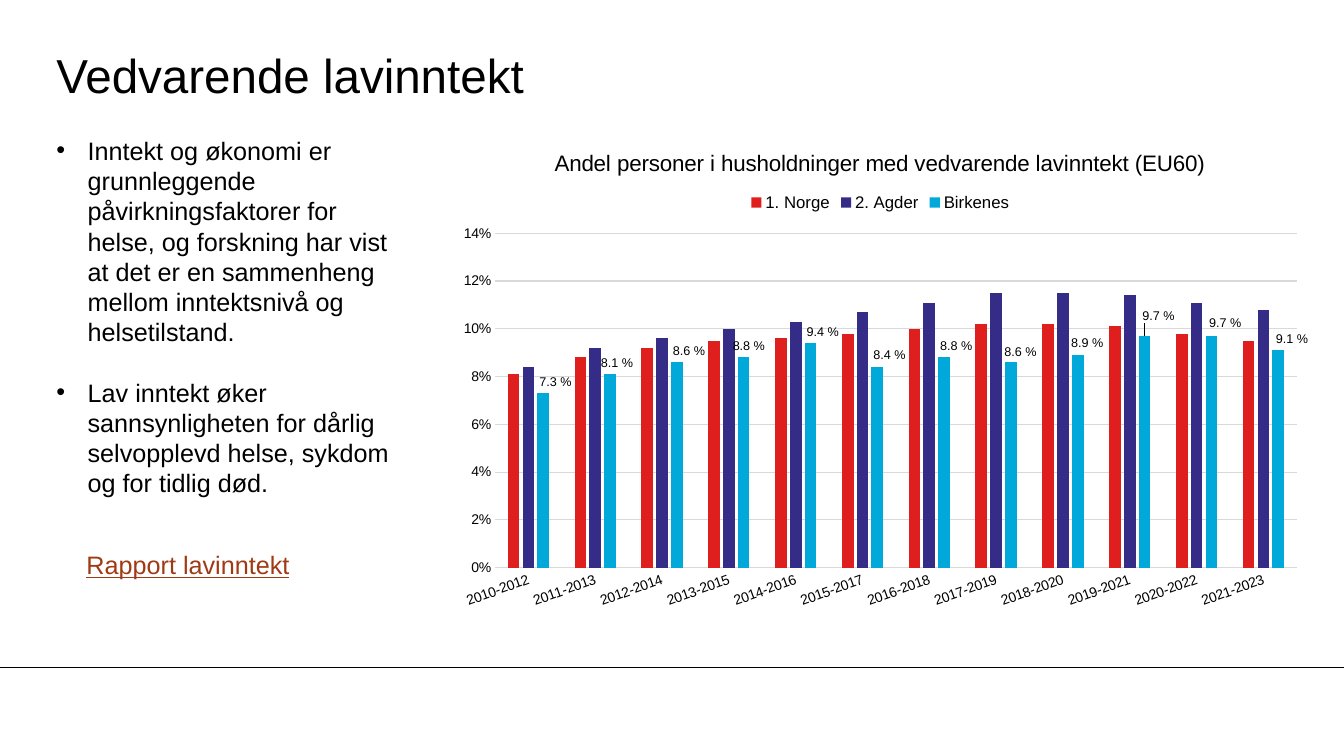
from lxml import etree
from pptx import Presentation
from pptx.chart.data import CategoryChartData
from pptx.dml.color import RGBColor
from pptx.enum.chart import (XL_CHART_TYPE as ChartType, XL_LABEL_POSITION as LabelPosition,
                             XL_LEGEND_POSITION as LegendPosition, XL_TICK_MARK as TickMark)
from pptx.enum.shapes import MSO_CONNECTOR as Connector
from pptx.enum.text import MSO_ANCHOR as Anchor
from pptx.oxml.ns import qn
from pptx.util import Cm, Pt

FONT = "Arial"
BLACK, GREY, LINK = "000000", "D9D9D9", "9F3A14"
REASONS = [
    "Inntekt og økonomi er grunnleggende påvirkningsfaktorer for helse, og forskning "
    "har vist at det er en sammenheng mellom inntektsnivå og helsetilstand.",
    "Lav inntekt øker sannsynligheten for dårlig selvopplevd helse, sykdom og for tidlig død.",
]
CHART_TITLE = "Andel personer i husholdninger med vedvarende lavinntekt (EU60)"
PERIODS = [f"{year}-{year + 2}" for year in range(2010, 2022)]
SERIES = [
    ("1. Norge", "DF1F1D", [8.1, 8.8, 9.2, 9.5, 9.6, 9.8, 10, 10.2, 10.2, 10.1, 9.8, 9.5]),
    ("2. Agder", "342C86", [8.4, 9.2, 9.6, 10, 10.3, 10.7, 11.1, 11.5, 11.5, 11.4, 11.1, 10.8]),
    ("Birkenes", "00A9DA", [7.3, 8.1, 8.6, 8.8, 9.4, 8.4, 8.8, 8.6, 8.9, 9.7, 9.7, 9.1]),
]
LABEL_SHIFT = (0.014, 0)
SPECIAL_SHIFTS = {
    "2011-2013": (0.008, 0), "2013-2015": (0.006, 0), "2017-2019": (0.011, 0.002),
    "2018-2020": (0.011, 0), "2019-2021": (0.016, -0.017), "2020-2022": (0.016, -0.002),
    "2021-2023": (0.016, 0),
}


def color(hex_string):
    return RGBColor.from_string(hex_string)


def set_font(font, size, hex_string=BLACK):
    font.name, font.size, font.bold = FONT, Pt(size), False
    font.color.rgb = color(hex_string)


def set_line(line, hex_string):
    line.color.rgb = color(hex_string)
    line.width = Pt(0.75)


def add_text(slide, box, texts, size, hex_string=BLACK):
    """Add a wrapping text box with one paragraph per text and return its frame."""
    frame = slide.shapes.add_textbox(*map(Cm, box)).text_frame
    frame.word_wrap = True
    frame.text = "\n".join(texts)
    for paragraph in frame.paragraphs:
        set_font(paragraph.font, size, hex_string)
    return frame


def add_title(slide, box):
    frame = add_text(slide, box, ["Vedvarende lavinntekt"], 34)
    frame.vertical_anchor = Anchor.MIDDLE
    frame.margin_left = frame.margin_right = frame.margin_top = frame.margin_bottom = 0


def add_reasons(slide, box):
    frame = add_text(slide, box, REASONS, 18)
    for index, paragraph in enumerate(frame.paragraphs):
        properties = paragraph._p.get_or_add_pPr()
        properties.set("marL", str(Cm(0.79)))
        properties.set("indent", str(Cm(-0.79)))
        properties.insert(0, etree.Element(qn("a:buFont"), typeface=FONT))
        properties.insert(1, etree.Element(qn("a:buChar"), char="•"))
        if index:
            paragraph.space_before = Pt(21.5)


def add_report_link(slide, box):
    frame = add_text(slide, box, ["Rapport lavinntekt"], 18, LINK)
    frame.paragraphs[0].font.underline = True


def set_layout(parent, index, **values):
    """Give a chart element a manual layout in place of its automatic one."""
    for old_layout in parent.findall(qn("c:layout")):
        parent.remove(old_layout)
    layout = etree.Element(qn("c:layout"))
    manual = etree.SubElement(layout, qn("c:manualLayout"))
    for name, value in values.items():
        etree.SubElement(manual, qn(f"c:{name}"), val=str(value))
    parent.insert(index, layout)


def label_columns(series):
    """Show each value a little to the right of its column top."""
    labels = series.data_labels
    labels.show_value = True
    labels.number_format, labels.number_format_is_linked = r"0.0\ %", False
    set_font(labels.font, 9)
    for index in range(len(PERIODS)):
        label = series.points[index].data_label
        label.position = LabelPosition.OUTSIDE_END
        set_font(label.font, 9)
    for period, element in zip(PERIODS, labels._element.findall(qn("c:dLbl"))):
        x, y = SPECIAL_SHIFTS.get(period, LABEL_SHIFT)
        set_layout(element, 1, x=x, y=y)


def style_axes(chart):
    periods, shares = chart.category_axis, chart.value_axis
    for axis in (periods, shares):
        axis.major_tick_mark = axis.minor_tick_mark = TickMark.NONE
        set_font(axis.tick_labels.font, 10)
    set_line(periods.format.line, GREY)
    periods._element.find(qn("c:txPr")).find(qn("a:bodyPr")).set("rot", str(-20 * 60000))
    shares.format.line.fill.background()
    set_line(shares.major_gridlines.format.line, GREY)
    shares.minimum_scale, shares.maximum_scale, shares.major_unit = 0, 0.14, 0.02
    shares.tick_labels.number_format = "0%"
    shares.tick_labels.number_format_is_linked = False


def add_income_chart(slide, box):
    data = CategoryChartData(number_format=r"0.0\ %")
    data.categories = PERIODS
    for name, _, percentages in SERIES:
        data.add_series(name, [round(value / 100, 3) for value in percentages])
    chart = slide.shapes.add_chart(ChartType.COLUMN_CLUSTERED, *map(Cm, box), data).chart
    set_font(chart.font, 10)

    title = chart.chart_title
    title.text_frame.text = CHART_TITLE
    set_font(title.text_frame.paragraphs[0].font, 16)
    set_layout(title._element, 1, xMode="edge", yMode="edge", x=0.12, y=0.03)

    chart.has_legend = True
    chart.legend.position = LegendPosition.TOP
    chart.legend.include_in_layout = False
    set_font(chart.legend.font, 12)
    set_layout(chart.legend._element, 1, xMode="edge", yMode="edge", x=0.345, y=0.118, w=0.31, h=0.06)

    plot = chart.plots[0]
    plot.gap_width, plot.overlap, plot.vary_by_categories = 219, -27, False
    for series, (_, fill, _) in zip(plot.series, SERIES):
        series.format.fill.solid()
        series.format.fill.fore_color.rgb = color(fill)
    label_columns(plot.series[-1])
    style_axes(chart)
    set_layout(chart._chartSpace.chart.plotArea, 0, layoutTarget="inner", xMode="edge", yMode="edge",
               x=0.056, y=0.211, w=0.924, h=0.684)


def add_footer_line(slide, left, top, width):
    line = slide.shapes.add_connector(Connector.STRAIGHT, Cm(left), Cm(top), Cm(left + width), Cm(top))
    set_line(line.line, BLACK)
    etree.SubElement(line._element.spPr, qn("a:effectLst"))


def main():
    presentation = Presentation()
    presentation.slide_width, presentation.slide_height = Cm(33.87), Cm(19.05)
    slide = presentation.slides.add_slide(presentation.slide_layouts[6])
    add_footer_line(slide, 0, 16.81, 33.87)
    add_title(slide, (1.42, 0.93, 28.19, 1.9))
    add_reasons(slide, (1.17, 3.28, 8.89, 9.5))
    add_report_link(slide, (1.93, 13.72, 6.73, 1.02))
    add_income_chart(slide, (11.25, 3.28, 21.87, 12.32))
    presentation.save("out.pptx")


if __name__ == "__main__":
    main()
